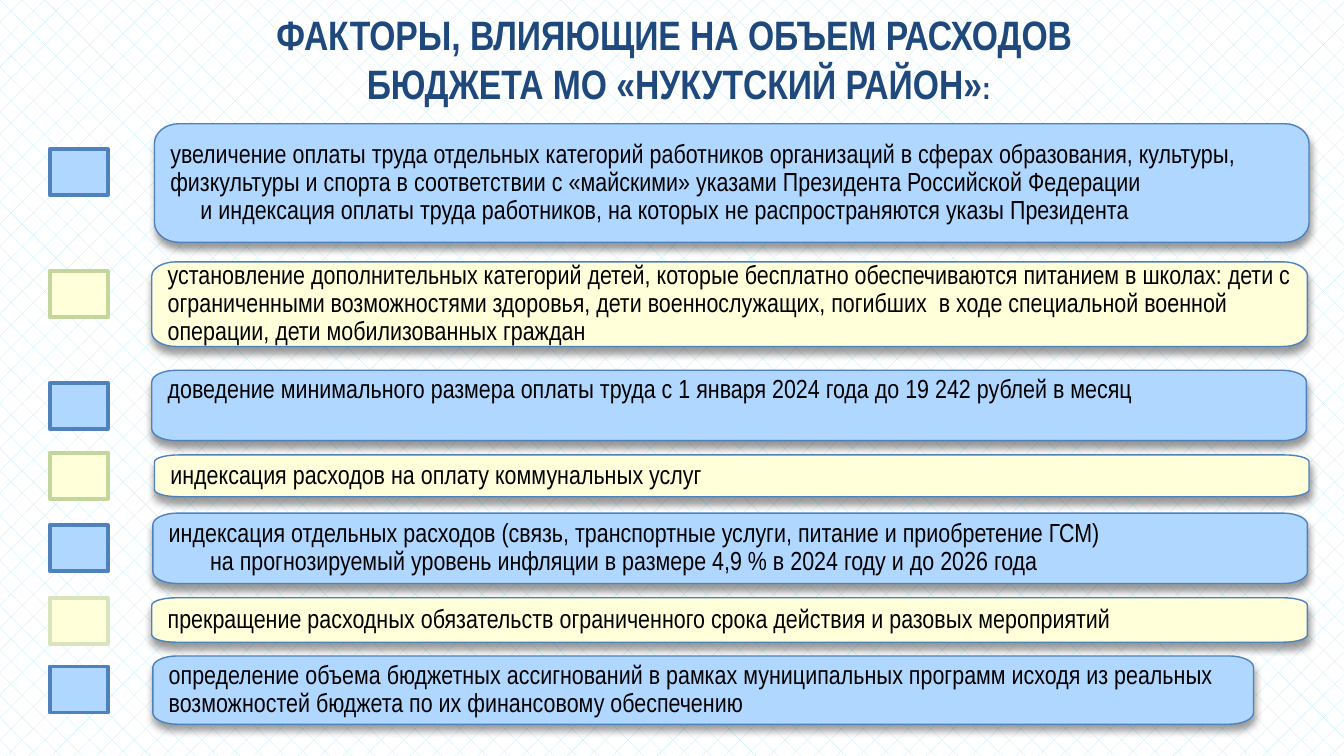
from lxml.etree import SubElement
from pptx import Presentation
from pptx.dml.color import RGBColor
from pptx.enum.dml import MSO_PATTERN
from pptx.enum.shapes import MSO_SHAPE
from pptx.enum.text import MSO_ANCHOR, MSO_AUTO_SIZE, PP_ALIGN
from pptx.oxml.ns import qn
from pptx.util import Cm, Pt

COLORS = {
    "blue": "AFD7FF",
    "yellow": "FFFFD9",
    "outline": "4F81BD",
    "green": "C3D69B",
    "pale_green": "D7E4BD",
    "title": "1F497D",
    "text": "000000",
    "pattern": "BDECF9",
    "white": "FFFFFF",
}


def rgb(name):
    return RGBColor.from_string(COLORS[name])


def add_text(paragraph, text, size=14, color="text", bold=False, font="Arial Narrow"):
    run = paragraph.add_run()
    run.text = text
    run.font.name = font
    run.font.size = Pt(size)
    run.font.bold = bold
    run.font.color.rgb = rgb(color)


class FactorSlide:
    corner_width = 0.46
    corner_share = 1 / 6
    curve_pull = 0.55
    marker_left, marker_width, marker_height = 0.94, 1.1, 0.87

    def __init__(self, presentation):
        self.slide = presentation.slides.add_slide(presentation.slide_layouts[5])

    def set_background(self):
        fill = self.slide.background.fill
        fill.patterned()
        fill.pattern = MSO_PATTERN.DIAGONAL_BRICK
        fill.fore_color.rgb = rgb("pattern")
        fill.back_color.rgb = rgb("white")

    def add_title(self, lines):
        """Each line is a list of (text, size) pairs."""
        title = self.slide.shapes.title
        title.left, title.top, title.width, title.height = Cm(1.4), Cm(0.38), Cm(22.86), Cm(1.35)
        frame = title.text_frame
        frame.auto_size = MSO_AUTO_SIZE.NONE
        frame.vertical_anchor = MSO_ANCHOR.MIDDLE
        frame.margin_top, frame.margin_bottom = Cm(0.1), Cm(0)
        for index, line in enumerate(lines):
            paragraph = frame.paragraphs[0] if index == 0 else frame.add_paragraph()
            paragraph.alignment = PP_ALIGN.CENTER
            paragraph.space_before = Pt(0)
            for text, size in line:
                add_text(paragraph, text, size=size, color="title", bold=True)

    def paint(self, shape, fill, line, line_width):
        shape.fill.solid()
        shape.fill.fore_color.rgb = rgb(fill)
        shape.line.color.rgb = rgb(line)
        shape.line.width = Pt(line_width)
        shape.shadow.inherit = False

    def add_marker(self, top, fill, line):
        marker = self.slide.shapes.add_shape(
            MSO_SHAPE.RECTANGLE, Cm(self.marker_left), Cm(top),
            Cm(self.marker_width), Cm(self.marker_height))
        self.paint(marker, fill, line, 2)

    def add_outline(self, left, top, width, height):
        """Build a rectangle whose corners are quarter ellipses."""
        right, bottom = left + width, top + height
        radius_x, radius_y = self.corner_width, height * self.corner_share
        points = [
            (left, top + radius_y), (left + radius_x, top),
            (right - radius_x, top), (right, top + radius_y),
            (right, bottom - radius_y), (right - radius_x, bottom),
            (left + radius_x, bottom), (left, bottom - radius_y),
        ]
        first, *others = [(Cm(x), Cm(y)) for x, y in points]
        builder = self.slide.shapes.build_freeform(*first)
        builder.add_line_segments(others, close=True)
        shape = builder.convert_to_shape()
        self.round_corners(shape)
        return shape

    def round_corners(self, shape):
        """Turn every other straight segment, the cut corners, into a curve."""
        outline = shape.element.spPr.find(".//" + qn("a:path"))
        nodes = list(outline.iter(qn("a:pt")))
        points = [(int(node.get("x")), int(node.get("y"))) for node in nodes]
        vertices = [(0, 0), (shape.width, 0), (shape.width, shape.height), (0, shape.height)]
        for index, vertex in enumerate(vertices):
            segment = nodes[2 * index + 1].getparent()
            curve = SubElement(outline, qn("a:cubicBezTo"))
            outline.replace(segment, curve)
            start, end = points[2 * index:2 * index + 2]
            pulled = [[round(a + self.curve_pull * (b - a)) for a, b in zip(point, vertex)]
                      for point in (start, end)]
            for x, y in (*pulled, end):
                SubElement(curve, qn("a:pt"), x=str(x), y=str(y))

    def add_soft_shadow(self, shape):
        effects = shape.element.spPr.find(qn("a:effectLst"))
        shadow = SubElement(effects, qn("a:outerShdw"), blurRad=str(Pt(4)),
                            dist=str(Pt(3)), dir="5400000", rotWithShape="0")
        color = SubElement(shadow, qn("a:srgbClr"), val="000000")
        SubElement(color, qn("a:alpha"), val="40000")

    def add_panel(self, left, top, width, height, fill, lines, anchor=MSO_ANCHOR.MIDDLE):
        """Each line is a (text, left indent in cm) pair."""
        panel = self.add_outline(left, top, width, height)
        self.paint(panel, fill, "outline", 0.75)
        self.add_soft_shadow(panel)

        frame = panel.text_frame
        frame.word_wrap = True
        frame.vertical_anchor = anchor
        frame.margin_left = frame.margin_right = Cm(0.3)
        frame.margin_top = frame.margin_bottom = Cm(0.11)
        for index, (text, indent) in enumerate(lines):
            paragraph = frame.paragraphs[0] if index == 0 else frame.add_paragraph()
            paragraph.alignment = PP_ALIGN.LEFT
            paragraph.line_spacing = 0.9
            if indent:
                paragraph._p.get_or_add_pPr().set("marL", str(Cm(indent)))
            add_text(paragraph, text)


# left, top, width, height, marker top, marker line, anchor, lines
FACTORS = [
    (2.92, 2.34, 21.82, 2.24, 2.82, "outline", MSO_ANCHOR.MIDDLE, [
        ("увеличение оплаты труда отдельных категорий работников организаций в сферах "
         "образования, культуры, физкультуры и спорта в соответствии с «майскими» "
         "указами Президента Российской Федерации", 0),
        ("и индексация оплаты труда работников, на которых не распространяются "
         "указы Президента", 0.57)]),
    (2.87, 4.95, 21.84, 1.6, 5.13, "green", MSO_ANCHOR.MIDDLE, [
        ("установление дополнительных категорий детей, которые бесплатно обеспечиваются "
         "питанием в школах: дети с ограниченными возможностями здоровья, дети "
         "военнослужащих, погибших  в ходе специальной военной операции, дети "
         "мобилизованных граждан", 0)]),
    (2.87, 7, 21.82, 1.33, 7.24, "outline", MSO_ANCHOR.TOP, [
        ("доведение минимального размера оплаты труда с 1 января 2024 года "
         "до 19 242 рублей в месяц", 0)]),
    (2.92, 8.6, 21.82, 0.79, 8.56, "green", MSO_ANCHOR.MIDDLE, [
        ("индексация расходов на оплату коммунальных услуг", 0)]),
    (2.89, 9.7, 21.82, 1.33, 9.93, "outline", MSO_ANCHOR.MIDDLE, [
        ("индексация отдельных расходов (связь, транспортные услуги, питание "
         "и приобретение ГСМ)", 0),
        ("на прогнозируемый уровень инфляции в размере 4,9 % в 2024 году "
         "и до 2026 года", 0.78)]),
    (2.87, 11.3, 21.84, 0.84, 11.3, "pale_green", MSO_ANCHOR.MIDDLE, [
        ("прекращение расходных обязательств ограниченного срока действия "
         "и разовых мероприятий", 0)]),
    (2.89, 12.4, 20.8, 1.29, 12.6, "outline", MSO_ANCHOR.MIDDLE, [
        ("определение объема бюджетных ассигнований в рамках муниципальных программ "
         "исходя из реальных возможностей бюджета по их финансовому обеспечению", 0)]),
]


def main():
    presentation = Presentation()
    presentation.slide_width, presentation.slide_height = Cm(25.4), Cm(14.29)
    factors = FactorSlide(presentation)
    factors.set_background()
    factors.add_title([
        [("ФАКТОРЫ, ВЛИЯЮЩИЕ НА ОБЪЕМ РАСХОДОВ ", 22)],
        [("БЮДЖЕТА МО «НУКУТСКИЙ РАЙОН»", 22), (":", 17)],
    ])
    for index, factor in enumerate(FACTORS):
        left, top, width, height, marker_top, marker_line, anchor, lines = factor
        fill = "yellow" if index % 2 else "blue"
        factors.add_panel(left, top, width, height, fill, lines, anchor)
        factors.add_marker(marker_top, fill, marker_line)
    presentation.save("out.pptx")


if __name__ == "__main__":
    main()
